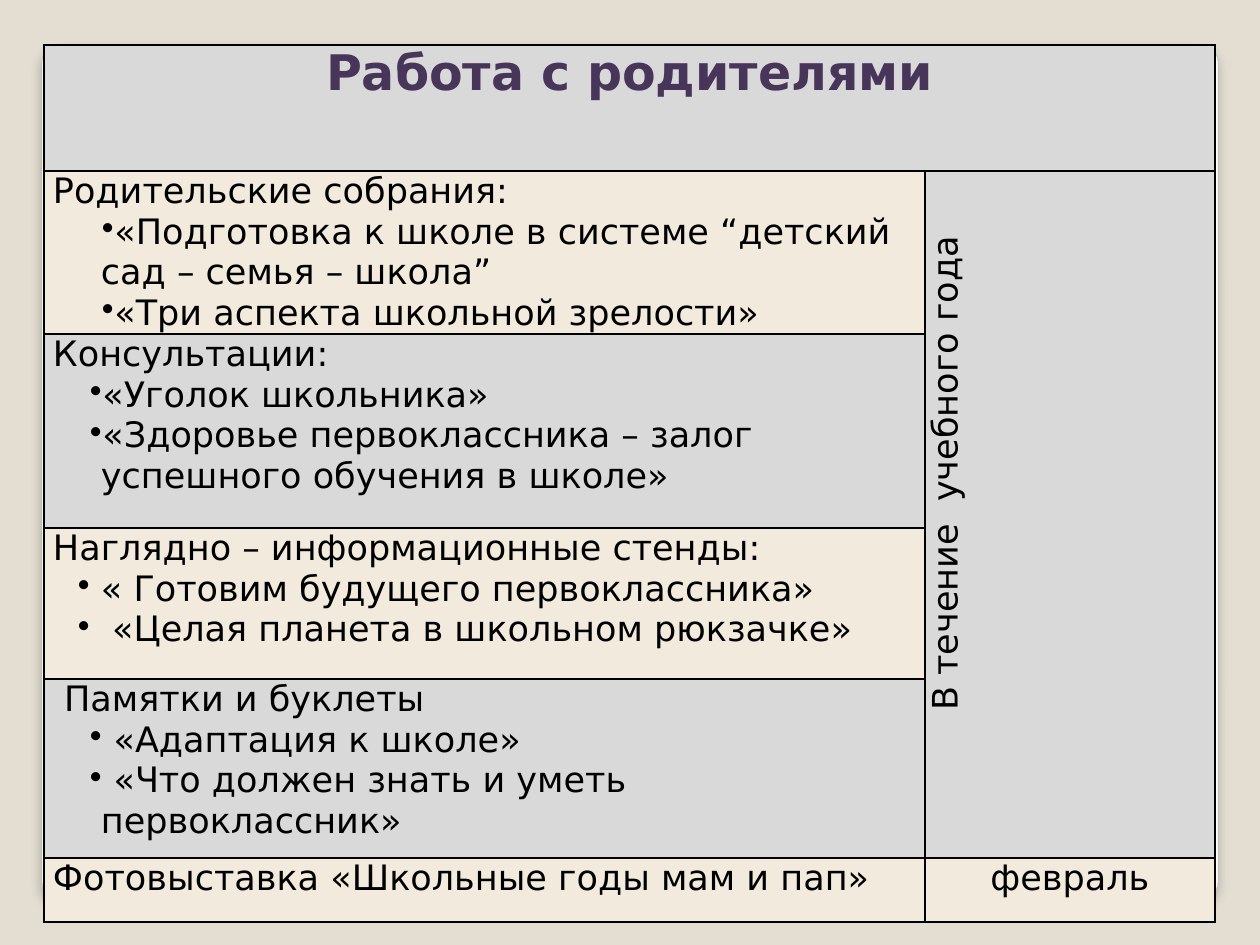
from lxml.etree import SubElement
from pptx import Presentation
from pptx.dml.color import RGBColor
from pptx.enum.shapes import MSO_SHAPE as SHAPE
from pptx.enum.text import PP_ALIGN as ALIGN
from pptx.oxml import parse_xml
from pptx.oxml.ns import nsdecls, qn
from pptx.util import Emu, Pt

FONT = "DejaVu Sans"
COLORS = {
    "background": "E3DED1", "frame": "A4A4A4", "border": "000000",
    "title": "48365A", "text": "000000", "gray": "D9D9D9", "cream": "F3EADE",
}
PANEL_STOPS = [(0, "FFFFFF"), (98, "FFFFFF"), (99, "F7F7F7"), (100, "DADADA")]

TITLE = "Работа с родителями"
PERIOD = "В течение  учебного года"
MONTH = "февраль"
SECTIONS = [
    ("Родительские собрания:", 1, [
        "«Подготовка к школе в системе “детский сад – семья – школа”",
        "«Три аспекта школьной зрелости»"]),
    ("Консультации:", -11, [
        "«Уголок школьника»",
        "«Здоровье первоклассника – залог успешного обучения в школе»"]),
    ("Наглядно – информационные стенды:", -23, [
        "« Готовим будущего первоклассника»",
        " «Целая планета в школьном рюкзачке»"]),
    (" Памятки и буклеты", -11, [
        " «Адаптация к школе»",
        " «Что должен знать и уметь первоклассник»"]),
    ("Фотовыставка «Школьные годы мам и пап»", 0, []),
]
COLUMNS = [881, 290]
ROWS = [126, 163, 194, 151, 179, 64]
BULLET_LEFT = 48
CELL_MARGIN = 9
PERIOD_MARGIN = 91


def px(value):
    return Emu(round(value * 914400 / 126))


def rgb(name):
    return RGBColor.from_string(COLORS[name])


def add_panel(page):
    panel = page.shapes.add_shape(
        SHAPE.ROUNDED_RECTANGLE, px(42), px(45), px(1176), px(854))
    panel.adjustments[0] = 0.02
    panel.line.color.rgb = rgb("frame")
    panel.line.width = Pt(0.16)
    stops = "".join(
        f'<a:gs pos="{position * 1000}"><a:srgbClr val="{color}"/></a:gs>'
        for position, color in PANEL_STOPS)
    properties = panel._element.spPr
    properties.find(qn("a:ln")).addprevious(parse_xml(
        f'<a:gradFill {nsdecls("a")}><a:gsLst>{stops}</a:gsLst>'
        '<a:lin ang="5400000" scaled="0"/></a:gradFill>'))
    properties.append(parse_xml(
        f'<a:effectLst {nsdecls("a")}><a:outerShdw blurRad="{Pt(6)}" '
        f'dist="{Pt(4)}" dir="5400000"><a:srgbClr val="000000">'
        '<a:alpha val="25000"/></a:srgbClr></a:outerShdw></a:effectLst>'))


def style_cell(cell, fill):
    cell.margin_left = cell.margin_right = px(CELL_MARGIN)
    cell.margin_top = cell.margin_bottom = 0
    properties = cell._tc.get_or_add_tcPr()
    for side in ("lnL", "lnR", "lnT", "lnB"):
        properties.append(parse_xml(
            f'<a:{side} {nsdecls("a")} w="{Pt(1)}"><a:solidFill>'
            f'<a:srgbClr val="{COLORS["border"]}"/></a:solidFill></a:{side}>'))
    cell.fill.solid()
    cell.fill.fore_color.rgb = rgb(fill)


def write(para, text, size=20, color="text", bold=False, align=ALIGN.LEFT):
    para.alignment = align
    span = para.add_run()
    span.text = text
    span.font.name = FONT
    span.font.size = Pt(size)
    span.font.bold = bold
    span.font.color.rgb = rgb(color)


def add_bullet(para, indent):
    properties = para._p.get_or_add_pPr()
    properties.set("marL", str(px(BULLET_LEFT)))
    properties.set("indent", str(px(indent)))
    SubElement(properties, qn("a:buChar")).set("char", "•")


def add_plan(page):
    frame = page.shapes.add_table(
        len(ROWS), len(COLUMNS), px(44), px(45), px(sum(COLUMNS)), px(sum(ROWS)))
    table = frame.table
    for column, width in zip(table.columns, COLUMNS):
        column.width = px(width)
    for row, height in zip(table.rows, ROWS):
        row.height = px(height)

    last = len(ROWS) - 1
    for index in range(len(ROWS)):
        fill = "cream" if index % 2 else "gray"
        style_cell(table.cell(index, 0), fill)
        style_cell(table.cell(index, 1), fill if index == last else "gray")
    table.cell(0, 0).merge(table.cell(0, 1))
    table.cell(1, 1).merge(table.cell(last - 1, 1))

    write(table.cell(0, 0).text_frame.paragraphs[0], TITLE, 28, "title", True, ALIGN.CENTER)
    for index, (heading, indent, items) in enumerate(SECTIONS, 1):
        text_frame = table.cell(index, 0).text_frame
        write(text_frame.paragraphs[0], heading)
        for item in items:
            para = text_frame.add_paragraph()
            write(para, item)
            add_bullet(para, indent)

    period = table.cell(1, 1)
    period.margin_left = px(PERIOD_MARGIN)
    period._tc.get_or_add_tcPr().set("vert", "vert270")
    write(period.text_frame.paragraphs[0], PERIOD, align=ALIGN.CENTER)
    write(table.cell(last, 1).text_frame.paragraphs[0], MONTH, align=ALIGN.CENTER)


def main():
    deck = Presentation()
    deck.slide_width, deck.slide_height = px(1260), px(945)
    page = deck.slides.add_slide(deck.slide_layouts[6])
    page.background.fill.solid()
    page.background.fill.fore_color.rgb = rgb("background")
    add_panel(page)
    add_plan(page)
    deck.save("out.pptx")


if __name__ == "__main__":
    main()
